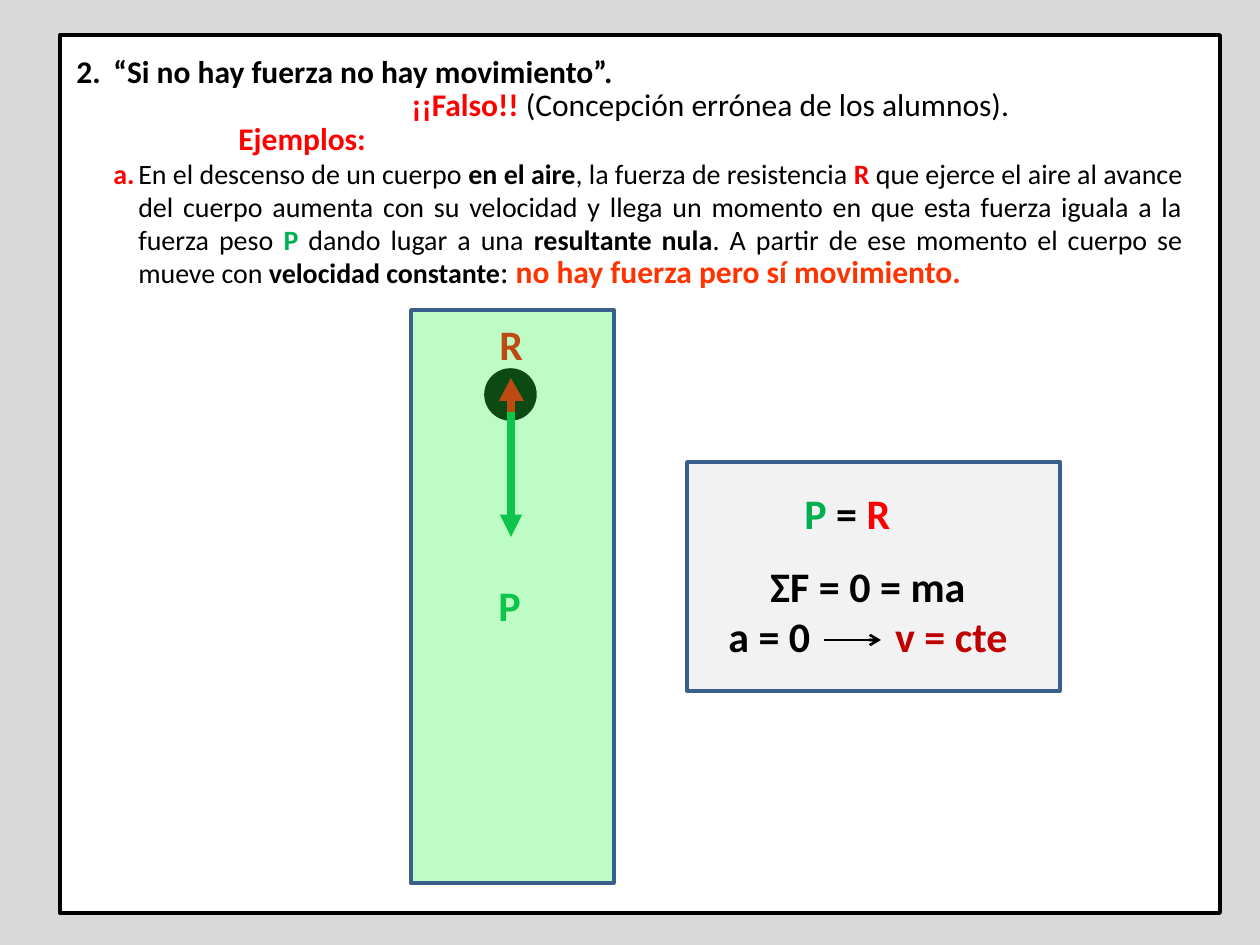
from pptx import Presentation
from pptx.dml.color import RGBColor as RGB
from pptx.enum.shapes import MSO_CONNECTOR as Conn, MSO_SHAPE as Shape
from pptx.enum.text import MSO_ANCHOR as Anchor, PP_ALIGN as Align
from pptx.oxml.ns import qn
from pptx.util import Emu, Pt
from lxml.etree import SubElement as Sub

BLACK, RED, GREEN, BLUE = "000000", "FF0000", "00B050", "3A5F8C"


def px(n):
    return Emu(round(n * 914400 / 126))


def hue(code):
    return RGB.from_string(code)


class Board:
    """Draws styled elements on one slide, measured in px."""

    def __init__(self, slide, font="Calibri"):
        self.slide, self.font = slide, font
        self.items = slide.shapes

    def paint(self, shape, fill, line=None, width=2, alpha=None):
        shape.shadow.inherit = False
        shape.fill.solid()
        shape.fill.fore_color.rgb = hue(fill)
        if alpha:
            tint = shape.fill._xPr.find(qn("a:solidFill"))[0]
            Sub(tint, qn("a:alpha"), val=str(alpha * 1000))
        if line:
            shape.line.color.rgb = hue(line)
            shape.line.width = Pt(width)
        else:
            shape.line.fill.background()

    def shape(self, kind, box, *style):
        self.paint(self.items.add_shape(kind, *map(px, box)), *style)

    def shard(self, points, fill):
        first, *rest = [(px(x), px(y)) for x, y in points]
        pen = self.items.build_freeform(*first)
        pen.add_line_segments(rest, close=True)
        self.paint(pen.convert_to_shape(), fill)

    def line(self, ends, color, width, head=None):
        link = self.items.add_connector(Conn.STRAIGHT, *map(px, ends))
        link.line.color.rgb = hue(color)
        link.line.width = Pt(width)
        if head:
            Sub(link.line._get_or_add_ln(), qn("a:tailEnd"), type=head)
        Sub(link._element.spPr, qn("a:effectLst"))

    def text(self, box, paras, size=24, anchor=Anchor.TOP):
        frame = self.items.add_textbox(*map(px, box)).text_frame
        frame.word_wrap = True
        frame.vertical_anchor = anchor
        for i, (runs, look) in enumerate(paras):
            para = frame.add_paragraph() if i else frame.paragraphs[0]
            self.para(para, runs, size, **look)

    def para(self, para, runs, size, align=Align.LEFT, left=0, hang=0,
             lead=None, start=None):
        para.alignment = align
        if lead:
            para.line_spacing = Pt(lead)
        props = para._p.get_or_add_pPr()
        props.set("marL", str(px(left)))
        props.set("indent", str(-px(hang)))
        if start:
            Sub(props, qn("a:buFont"), typeface="+mj-lt")
            Sub(props, qn("a:buAutoNum"), type="arabicPeriod", startAt=str(start))
        for words, color, bold, *own in runs:
            run = para.add_run()
            run.text = words
            font = run.font
            font.name, font.bold = self.font, bold
            font.size = Pt(own[0] if own else size)
            font.color.rgb = hue(color)
            if len(own) > 1:
                font._element.set("spc", str(own[1] * 100))


def main():
    deck = Presentation()
    deck.slide_width, deck.slide_height = px(1260), px(945)
    slide = deck.slides.add_slide(deck.slide_layouts[6])
    back = slide.background.fill
    back.solid()
    back.fore_color.rgb = hue("D9D9D9")
    board = Board(slide)

    board.shape(Shape.RECTANGLE, (60, 35, 1160, 878), "FFFFFF", BLACK, 2.25)
    board.shape(Shape.RECTANGLE, (687, 462, 373, 229), "F2F2F2", BLUE)

    claim = [("“Si no hay fuerza no hay movimiento”.", BLACK, True)]
    reply = [("¡¡Falso!! ", RED, True),
             ("(Concepción errónea de los alumnos).", BLACK, False)]
    case = [
        ("a.", RED, True, 16),
        ("\tEn el descenso de un cuerpo ", BLACK, False, 16),
        ("en el aire", BLACK, True, 16),
        (", la fuerza de resistencia ", BLACK, False, 16),
        ("R", RED, True, 16),
        (" que ejerce el aire al avance del cuerpo aumenta con su velocidad "
         "y llega un momento en que esta fuerza iguala a la fuerza peso ",
         BLACK, False, 16),
        ("P", GREEN, True, 16),
        (" dando lugar a una ", BLACK, False, 16),
        ("resultante nula", BLACK, True, 16),
        (". A partir de ese momento el cuerpo se mueve con ", BLACK, False, 16),
        ("velocidad constante", BLACK, True, 16),
        (": ", BLACK, False),
        ("no hay fuerza pero sí movimiento.", "FF3300", True),
    ]
    board.text((64, 49, 1131, 248), [
        (claim, dict(align=Align.JUSTIFY, left=37, hang=37, lead=19, start=2)),
        (reply, dict(left=335, lead=19)),
        ([("Ejemplos:", RED, True)], dict(left=162, lead=19)),
        (case, dict(align=Align.JUSTIFY, left=62, hang=25, lead=19)),
    ], size=18, anchor=Anchor.MIDDLE)

    board.shape(Shape.OVAL, (486, 370, 49, 49), BLACK, BLACK)
    board.line((511, 398, 511, 537), GREEN, 4.25, "triangle")
    board.text((486, 573, 53, 64), [([("P", GREEN, True)], {})])
    board.line((511, 412, 511, 398), RED, 4.25)
    board.text((487, 312, 48, 64), [([("R", RED, True)], {})])

    equal = [("P ", GREEN, True), ("=", BLACK, True), (" R", RED, True)]
    board.text((792, 481, 136, 63), [(equal, {})])
    board.shard([(499, 401), (511, 378), (524, 401)], RED)
    steady = [("a = 0", BLACK, True), (" ", BLACK, True, 24, 43),
              ("v = cte", "C00000", True)]
    board.text((710, 554, 316, 115), [
        ([("ΣF = 0 = ma", BLACK, True)], dict(align=Align.CENTER)),
        (steady, dict(align=Align.CENTER)),
    ])
    board.line((824, 640, 881, 640), BLACK, 1.5, "arrow")
    board.shape(Shape.RECTANGLE, (411, 310, 203, 573), "2AF642", BLUE, 2, 30)
    deck.save("out.pptx")


if __name__ == "__main__":
    main()
